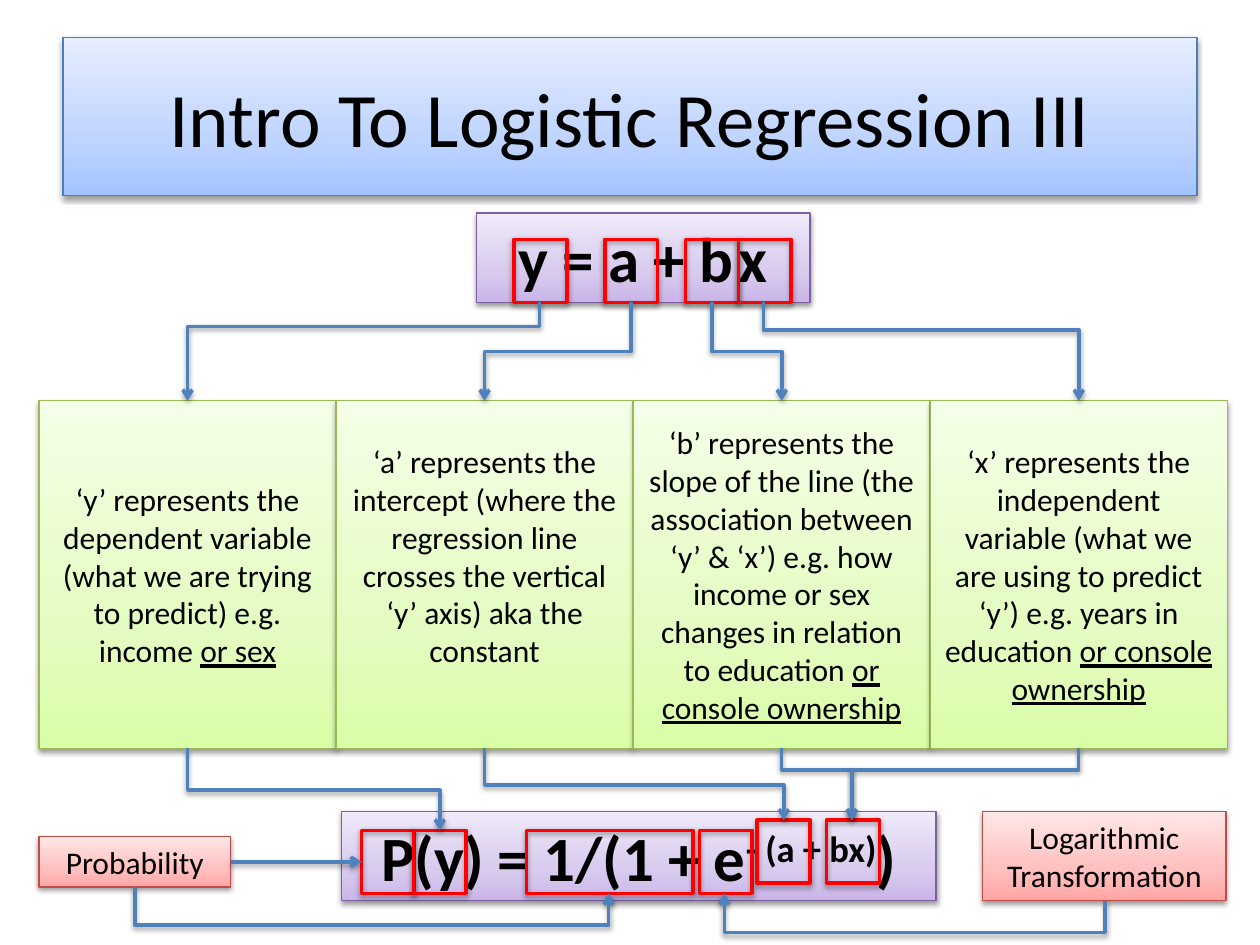
import pptx
import pptx.dml.color
import pptx.enum.shapes
import pptx.enum.text
import pptx.oxml
import pptx.oxml.ns
import pptx.util
from lxml import etree
from pptx.util import Inches

qn = pptx.oxml.ns.qn

# Gradient stops at 0, 35 and 100 percent, then the outline
BLUE = ("A4C4FF", "BFD4FF", "E6EEFF", "4B7EBC")
PURPLE = ("C9B5E8", "D8CBEE", "F0EAF9", "7D60A0")
GREEN = ("DAFDA7", "E4FCC2", "F5FFE7", "98B955")
RED = ("FFA6A5", "FFC0BF", "FFE7E7", "BF4C48")
LINE_HEIGHT = 0.3

COLUMN_TOP, COLUMN_BOTTOM = 3.18, 5.94
TERMS = [
    [("‘y’ represents the dependent variable (what we are trying to predict) e.g. income ", {}),
     ("or sex", {"underline": True})],
    [("‘a’ represents the intercept (where the regression line crosses the vertical "
      "‘y’ axis) aka the constant", {})],
    [("‘b’ represents the slope of the line (the association between ‘y’ & ‘x’) e.g. how "
      "income or sex changes in relation to education ", {}),
     ("or console ownership", {"underline": True})],
    [("‘x’ represents the independent variable (what we are using to predict ‘y’) e.g. "
      "years in education ", {}),
     ("or console ownership", {"underline": True})],
]


def rgb(color):
    return pptx.dml.color.RGBColor.from_string(color)


def add_shadow(shape):
    properties = shape._element.spPr
    effects = properties.find(qn("a:effectLst"))
    if effects is None:
        effects = etree.SubElement(properties, qn("a:effectLst"))
    shadow = etree.SubElement(effects, qn("a:outerShdw"), blurRad="39400", dist="20300",
                              dir="5400000", rotWithShape="0")
    color = etree.SubElement(shadow, qn("a:srgbClr"), val="000000")
    etree.SubElement(color, qn("a:alpha"), val="38000")


def add_box(slide, box, line, width):
    shape = slide.shapes.add_shape(pptx.enum.shapes.MSO_SHAPE.RECTANGLE,
                                   *[Inches(length) for length in box])
    shape.line.color.rgb = rgb(line)
    shape.line.width = pptx.util.Pt(width)
    shape.shadow.inherit = False
    add_shadow(shape)
    return shape


def add_panel(slide, box, palette, runs, size, bold=False):
    """A gradient box with one centred paragraph."""
    *stops, line = palette
    panel = add_box(slide, box, line, 0.75)
    panel.fill.gradient()
    panel.fill.gradient_angle = 90
    stop_list = panel._element.spPr.find(qn("a:gradFill")).find(qn("a:gsLst"))
    stop_list.clear()
    for position, color in zip((0, 35, 100), stops):
        stop = etree.SubElement(stop_list, qn("a:gs"), pos=str(position * 1000))
        etree.SubElement(stop, qn("a:srgbClr"), val=color)

    frame = panel.text_frame
    frame.word_wrap = True
    frame.vertical_anchor = pptx.enum.text.MSO_ANCHOR.MIDDLE
    paragraph = frame.paragraphs[0]
    paragraph.alignment = pptx.enum.text.PP_ALIGN.CENTER
    for text, style in runs:
        run = paragraph.add_run()
        run.text = text
        run.font.name = "Calibri"
        run.font.size = pptx.util.Pt(style.get("size", size))
        run.font.bold = bold
        run.font.color.rgb = rgb("000000")
        if style.get("underline"):
            run.font.underline = True
        if "baseline" in style:
            run._r.get_or_add_rPr().set("baseline", str(style["baseline"] * 1000))
    return panel


def add_markers(slide, lefts, top, width=0.42):
    """Red frames around terms of an equation."""
    for left in lefts:
        add_box(slide, (left, top, width, 0.5), "FF0000", 2).fill.background()


def style_arrow(arrow):
    arrow.line.color.rgb = rgb("4F81BD")
    arrow.line.width = pptx.util.Pt(2)
    etree.SubElement(arrow.line._get_or_add_ln(), qn("a:tailEnd"), type="arrow")
    add_shadow(arrow)


def add_elbow(slide, start, end, bend):
    """An arrow that leaves vertically and turns at height bend."""
    (x0, y0), (x1, y1) = start, end
    run, drop = abs(x1 - x0), abs(y1 - y0)
    left, top = (x0 + x1 - drop) / 2, (y0 + y1 - run) / 2
    arrow = slide.shapes.add_connector(
        pptx.enum.shapes.MSO_CONNECTOR.ELBOW,
        Inches(left), Inches(top), Inches(left + drop), Inches(top + run))
    leftward = x1 < x0
    frame = arrow._element.spPr.find(qn("a:xfrm"))
    frame.set("rot", str((90 if leftward else 270) * 60000))
    if leftward == (y1 < y0):
        frame.set("flipH", "1")
    guides = arrow._element.spPr.find(qn("a:prstGeom")).find(qn("a:avLst"))
    ratio = round((bend - y0) / (y1 - y0) * 100000)
    etree.SubElement(guides, qn("a:gd"), name="adj1", fmla=f"val {ratio}")
    style_arrow(arrow)


def add_linear_equation(slide, box):
    add_panel(slide, box, PURPLE, [("y = a + b", {}), (" ", {"size": 15}), ("x", {})], 36, True)
    add_markers(slide, (4.08, 4.8, 5.44, 5.86), box[1] + 0.21)


def add_term_columns(slide, box):
    """Four adjoining explanations; returns their centre lines."""
    left, top, width, height = box
    pitch = width / len(TERMS)
    for index, runs in enumerate(TERMS):
        column = add_panel(slide, (left + index * pitch, top, pitch, height), GREEN, runs, 18)
        if index == 1:  # this text sits half a line higher
            column.text_frame.margin_bottom = Inches(0.05 + LINE_HEIGHT)
    return [left + (index + 0.5) * pitch for index in range(len(TERMS))]


def add_logistic_equation(slide, box):
    runs = [("P(y) = 1/(1 + e", {}), ("- (a + bx)", {"baseline": 30}), (")", {})]
    add_panel(slide, box, PURPLE, runs, 36, True)
    top = box[1]
    add_markers(slide, (2.87, 3.28, 5.55), top + 0.15)
    add_markers(slide, (4.18,), top + 0.15, 1.32)
    add_markers(slide, (6.01, 6.56), top + 0.07)


def add_notes_arrows(slide):
    """Arrows from the two red labels to the logistic equation."""
    arrow = slide.shapes.add_connector(pptx.enum.shapes.MSO_CONNECTOR.STRAIGHT,
                                       Inches(1.83), Inches(6.84), Inches(2.87), Inches(6.84))
    style_arrow(arrow)
    add_elbow(slide, (1.07, 7.04), (4.83, 7.09), 7.34)
    add_elbow(slide, (8.77, 7.15), (5.75, 7.09), 7.4)


def main():
    deck = pptx.Presentation()
    deck.slide_width, deck.slide_height = Inches(10), Inches(7.5)
    slide = deck.slides.add_slide(deck.slide_layouts[6])

    # Title, linear equation and the meaning of its terms
    add_panel(slide, (0.5, 0.3, 9, 1.25), BLUE, [("Intro To Logistic Regression III", {})], 44)
    add_linear_equation(slide, (3.78, 1.69, 2.65, 0.71))
    centers = add_term_columns(slide, (0.31, COLUMN_TOP, 9.43, COLUMN_BOTTOM - COLUMN_TOP))

    # Logistic equation with its labels
    add_logistic_equation(slide, (2.71, 6.44, 4.72, 0.71))
    add_panel(slide, (0.31, 6.64, 1.52, 0.4), RED, [("Probability", {})], 18)
    add_panel(slide, (7.8, 6.44, 1.93, 0.71), RED, [("Logarithmic Transformation", {})], 18)

    # Arrows into and out of the columns
    sources = [(4.28, 2.59), (5.01, 2.79), (5.65, 2.79), (6.06, 2.62)]
    targets = [(3.49, 6.59, 6.27), (6.22, 6.51, 6.23), (6.76, 6.51, 6.11), (6.76, 6.51, 6.11)]
    for center, (x, bend) in zip(centers, sources):
        add_elbow(slide, (x, 2.4), (center, COLUMN_TOP), bend)
    for center, (x, y, bend) in zip(centers, targets):
        add_elbow(slide, (center, COLUMN_BOTTOM), (x, y), bend)
    add_notes_arrows(slide)

    deck.save("out.pptx")


if __name__ == "__main__":
    main()
